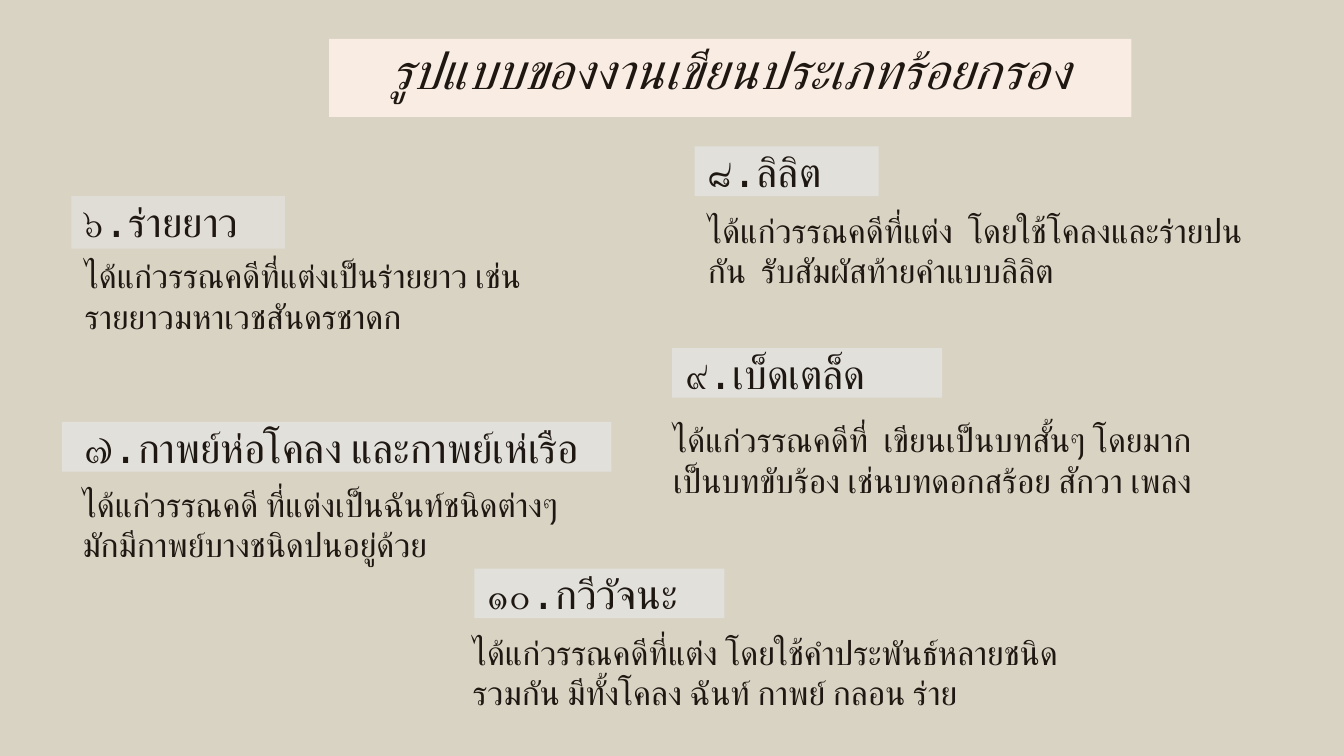
from itertools import groupby

from lxml import etree
from pptx import Presentation
from pptx.dml.color import RGBColor
from pptx.enum.shapes import MSO_SHAPE
from pptx.enum.text import MSO_ANCHOR, PP_ALIGN
from pptx.oxml.ns import qn
from pptx.util import Pt

RECTANGLE = MSO_SHAPE.RECTANGLE
TOP = MSO_ANCHOR.TOP
LEFT, CENTER = PP_ALIGN.LEFT, PP_ALIGN.CENTER

HEADING_FONT, BODY_FONT = "DejaVu Sans Mono", "Calibri"
BACKGROUND, INK = "D9D3C4", "1F1711"
TITLE_FILL, FIRST_FILL, HEADING_FILL = "F9ECE3", "E0DDD6", "E1E0DB"

TITLE = "รูปแบบของงานเขียนประเภทร้อยกรอง"
TITLE_BOX = (176.4, 20.9, 429.8, 41.8)

# Heading, its box and fill, then the description and its box
VERSE_FORMS = [
    ("๖.ร่ายยาว", (38.2, 105.1, 114.5, 28.1), FIRST_FILL,
     "ได้แก่วรรณคดีที่แต่งเป็นร่ายยาว เช่น\nรายยาวมหาเวชสันดรชาดก",
     (38.2, 136.8, 282.2, 82.8)),
    (" ๗.กาพย์ห่อโคลง และกาพย์เห่เรือ", (33.1, 226.1, 294.5, 26.6), HEADING_FILL,
     " ได้แก่วรรณคดี ที่แต่งเป็นฉันท์ชนิดต่างๆ\n มักมีกาพย์บางชนิดปนอยู่ด้วย",
     (33.1, 259.2, 304.6, 67.7)),
    ("๘.ลิลิต", (372.2, 78.5, 98.6, 26.6), HEADING_FILL,
     "ได้แก่วรรณคดีที่แต่ง  โดยใช้โคลงและร่ายปนกัน  รับสัมผัสท้ายคำแบบลิลิต",
     (372.2, 112.3, 303.1, 54)),
    ("๑๐.กวีวัจนะ", (254.2, 304.6, 133.9, 26.6), HEADING_FILL,
     "ได้แก่วรรณคดีที่แต่ง โดยใช้คำประพันธ์หลายชนิดรวมกัน มีทั้งโคลง ฉันท์ กาพย์ กลอน ร่าย",
     (246.2, 338.4, 350.6, 54.7)),
    ("๙.เบ็ดเตล็ด", (360, 186.5, 144.7, 26.6), HEADING_FILL,
     "ได้แก่วรรณคดีที่  เขียนเป็นบทสั้นๆ โดยมาก\nเป็นบทขับร้อง เช่นบทดอกสร้อย สักวา เพลง",
     (353.5, 224.6, 364.3, 59.8)),
]


def color(hex_string):
    return RGBColor.from_string(hex_string)


def split_spaces(paragraph):
    """Give spaces their own runs, so that they can be narrower than the mono font's."""
    pieces = ["".join(group) for _, group in groupby(paragraph.text, str.isspace)]
    paragraph.runs[0].text = pieces[0]
    for piece in pieces[1:]:
        paragraph.add_run().text = piece


def write(frame, text, font, size, align=LEFT, italic=False):
    frame.word_wrap = True
    frame.vertical_anchor = TOP
    frame.margin_left = frame.margin_right = frame.margin_bottom = Pt(7.2)
    frame.margin_top = Pt(0)
    frame.text = text
    for paragraph in frame.paragraphs:
        paragraph.alignment = align
        if font == HEADING_FONT:
            split_spaces(paragraph)
        for run in paragraph.runs:
            typeface = BODY_FONT if run.text.isspace() else font
            run.font.name = typeface
            run.font.size = Pt(size)
            run.font.italic = italic
            run.font.color.rgb = color(INK)
            # Thai letters take the complex-script font
            thai_font = etree.SubElement(run.font._element, qn("a:cs"))
            thai_font.set("typeface", typeface)


def add_banner(slide, text, box, fill, size, **style):
    banner = slide.shapes.add_shape(RECTANGLE, *map(Pt, box))
    banner.shadow.inherit = False
    banner.fill.solid()
    banner.fill.fore_color.rgb = color(fill)
    banner.line.fill.background()
    write(banner.text_frame, text, HEADING_FONT, size, **style)


def add_description(slide, text, box):
    description = slide.shapes.add_textbox(*map(Pt, box))
    write(description.text_frame, text, BODY_FONT, 18)


def main():
    deck = Presentation()
    deck.slide_width, deck.slide_height = Pt(720), Pt(405)
    slide = deck.slides.add_slide(deck.slide_layouts[6])
    slide.background.fill.solid()
    slide.background.fill.fore_color.rgb = color(BACKGROUND)

    add_banner(slide, TITLE, TITLE_BOX, TITLE_FILL, 27, align=CENTER, italic=True)
    for heading, heading_box, fill, description, description_box in VERSE_FORMS:
        add_banner(slide, heading, heading_box, fill, 22)
        add_description(slide, description, description_box)

    deck.save("out.pptx")


if __name__ == "__main__":
    main()
